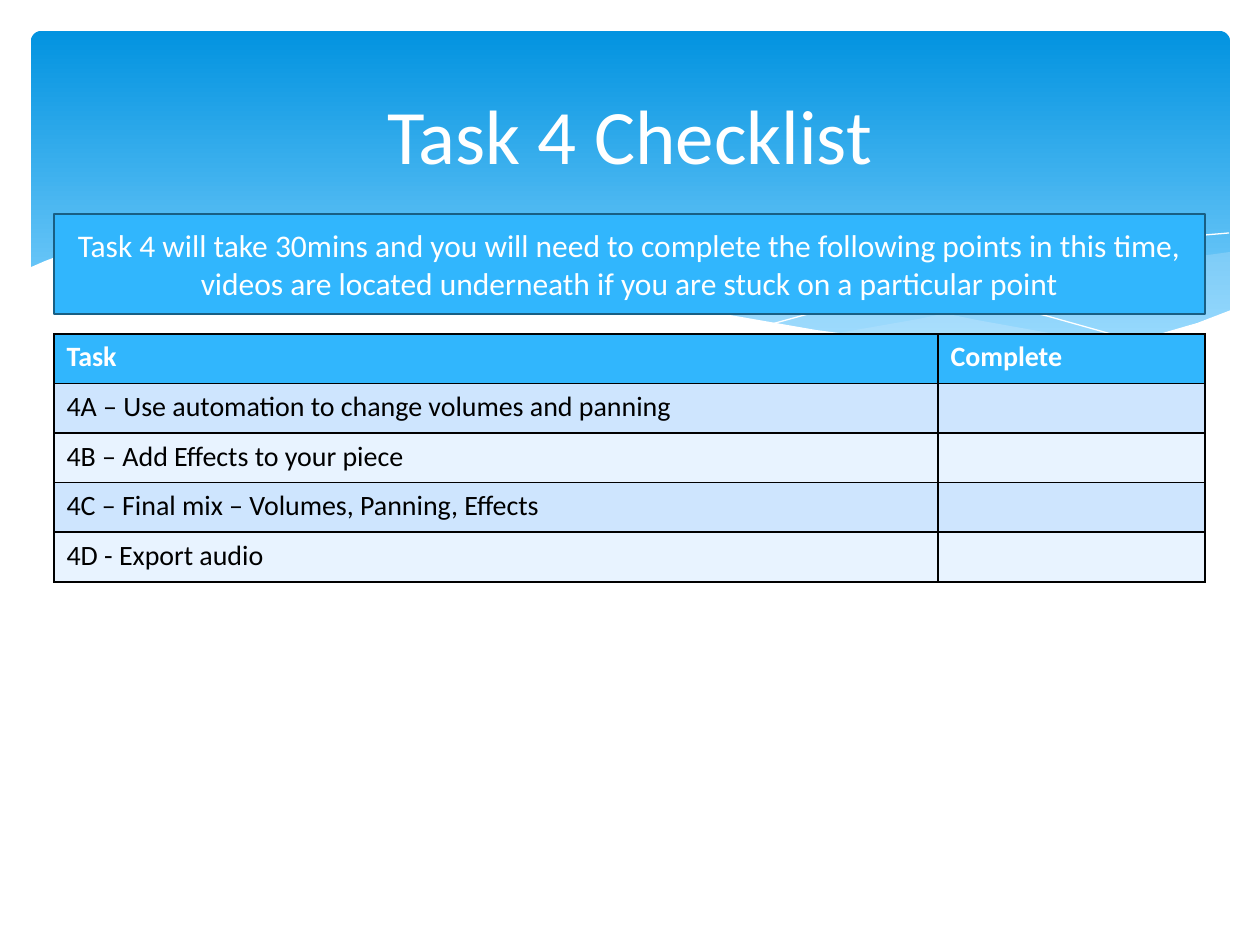
from lxml.etree import SubElement
from pptx import Presentation
from pptx.dml.color import RGBColor
from pptx.enum.shapes import MSO_SHAPE
from pptx.enum.text import MSO_ANCHOR, PP_ALIGN
from pptx.oxml.ns import qn
from pptx.util import Emu, Pt

EMU_PER_PX = 914400 / 126
FONT = "Calibri"
WHITE = RGBColor(0xFF, 0xFF, 0xFF)
BLACK = RGBColor(0x00, 0x00, 0x00)
BLUE = RGBColor(0x31, 0xB6, 0xFD)
DARK_BLUE = RGBColor(0x19, 0x5F, 0x84)
BANNER_TOP = RGBColor(0x02, 0x93, 0xE0)
BANNER_BOTTOM = RGBColor(0x83, 0xD3, 0xFE)
WAVE = RGBColor(0xC6, 0xE7, 0xFC)
BANDS = [RGBColor(0xCE, 0xE5, 0xFE), RGBColor(0xE8, 0xF3, 0xFF)]

RIGHT_WAVE = [
    (1230, 252), (1194, 257), (1142, 268), (1085, 281), (1014, 299), (919, 319), (833, 334),
    (888, 341), (954, 348), (1026, 350), (1087, 347), (1140, 339), (1187, 326), (1230, 311),
]
MIDDLE_WAVE = [
    (1125, 344), (1055, 334), (977, 320), (890, 302), (793, 280), (736, 266), (682, 256),
    (616, 244), (557, 238), (503, 234), (455, 233), (413, 236), (360, 241), (431, 251),
    (509, 266), (566, 280), (668, 302), (757, 321), (838, 335), (910, 345), (974, 349),
    (1031, 350), (1080, 349),
]
FALLING_LINE = [
    (389, 246), (413, 242), (457, 238), (524, 236), (591, 238), (672, 244), (766, 257),
    (876, 276), (958, 294), (1047, 316), (1143, 343),
]
RISING_LINE = [
    (772, 324), (823, 310), (907, 289), (978, 272), (1053, 257), (1128, 244), (1182, 237),
    (1229, 233),
]
WHITE_WAVE = [
    (1231, 310), (1197, 323), (1159, 334), (1118, 341), (1071, 347), (1019, 349), (959, 347),
    (892, 340), (816, 330), (730, 315), (634, 294), (563, 277), (493, 261), (428, 248),
    (368, 239), (315, 234), (243, 232), (184, 233), (134, 238), (96, 246), (66, 253),
    (45, 261), (29, 268), (29, 415), (1231, 415),
]
TASKS = [
    "4A – Use automation to change volumes and panning",
    "4B – Add Effects to your piece",
    "4C – Final mix – Volumes, Panning, Effects",
    "4D - Export audio",
]
INSTRUCTIONS = (
    "Task 4 will take 30mins and you will need to complete the following points in this time, "
    "videos are located underneath if you are stuck on a particular point"
)


def px(length):
    """Turn a length in px into EMU."""
    return Emu(round(length * EMU_PER_PX))


def format_runs(paragraph, size, color, bold=False):
    """Give every run of a paragraph its font, size and colour."""
    for run in paragraph.runs:
        run.font.name = FONT
        run.font.size = Pt(size)
        run.font.bold = bold
        run.font.color.rgb = color


def fill_text(shape, text, size):
    """Put centred white text in the middle of a shape."""
    text_frame = shape.text_frame
    text_frame.word_wrap = True
    text_frame.vertical_anchor = MSO_ANCHOR.MIDDLE
    text_frame.text = text
    paragraph = text_frame.paragraphs[0]
    paragraph.alignment = PP_ALIGN.CENTER
    format_runs(paragraph, size, WHITE)


def add_banner(slide):
    """Add the rounded gradient banner."""
    banner = slide.shapes.add_shape(
        MSO_SHAPE.ROUNDED_RECTANGLE, px(31), px(31), px(1199), px(340))
    banner.adjustments[0] = 0.03
    banner.shadow.inherit = False
    banner.line.fill.background()
    banner.fill.gradient()
    banner.fill.gradient_angle = 270
    stops = banner.fill.gradient_stops
    for stop, position, color in zip(stops, (0, 0.9), (BANNER_TOP, BANNER_BOTTOM)):
        stop.position = position
        stop.color.rgb = color


def add_outline(slide, points, close):
    """Add a freeform through the points."""
    builder = slide.shapes.build_freeform(*points[0], scale=EMU_PER_PX)
    builder.add_line_segments(points[1:], close=close)
    outline = builder.convert_to_shape()
    outline.shadow.inherit = False
    return outline


def add_wave(slide, points, color, opacity=100):
    """Add a filled wave, translucent below full opacity."""
    wave = add_outline(slide, points, True)
    wave.line.fill.background()
    wave.fill.solid()
    wave.fill.fore_color.rgb = color
    if opacity < 100:
        color_element = wave.fill._xPr.find(qn("a:solidFill"))[0]
        SubElement(color_element, qn("a:alpha"), val=str(opacity * 1000))


def add_wave_line(slide, points):
    """Add a white hairline curve."""
    curve = add_outline(slide, points, False)
    curve.fill.background()
    curve.line.color.rgb = WHITE
    curve.line.width = Pt(0)


def add_title(slide, text):
    """Add the slide title."""
    title = slide.shapes.add_textbox(px(63), px(47), px(1134), px(173))
    fill_text(title, text, 44)


def add_instruction_box(slide, text):
    """Add the framed instruction box."""
    box = slide.shapes.add_shape(MSO_SHAPE.RECTANGLE, px(54), px(214), px(1151), px(100))
    box.shadow.inherit = False
    box.fill.solid()
    box.fill.fore_color.rgb = BLUE
    box.line.color.rgb = DARK_BLUE
    box.line.width = Pt(1.25)
    fill_text(box, text, 18)


def style_cell(cell, text, fill, color, bold):
    """Fill a cell, write its text and draw its borders."""
    properties = cell._tc.get_or_add_tcPr()
    for side in ("a:lnL", "a:lnR", "a:lnT", "a:lnB"):
        border = SubElement(properties, qn(side), w=str(Pt(1)))
        border_fill = SubElement(border, qn("a:solidFill"))
        SubElement(border_fill, qn("a:srgbClr"), val=str(BLACK))
    cell.fill.solid()
    cell.fill.fore_color.rgb = fill
    paragraph = cell.text_frame.paragraphs[0]
    if text:
        paragraph.text = text
        format_runs(paragraph, 16, color, bold)
    else:
        SubElement(paragraph._p, qn("a:endParaRPr"), sz="1600")


def add_checklist(slide, tasks):
    """Add the checklist table with one row per task."""
    rows = [("Task", "Complete")] + [(task, "") for task in tasks]
    frame = slide.shapes.add_table(len(rows), 2, px(54), px(334), px(1151), px(248))
    table = frame.table
    for column, width in zip(table.columns, (884, 267)):
        column.width = px(width)
    for row_index, texts in enumerate(rows):
        header = row_index == 0
        fill = BLUE if header else BANDS[(row_index - 1) % 2]
        color = WHITE if header else BLACK
        for column_index, text in enumerate(texts):
            style_cell(table.cell(row_index, column_index), text, fill, color, header)


def main():
    """Build and save the checklist slide."""
    presentation = Presentation()
    presentation.slide_width = px(1260)
    presentation.slide_height = px(945)
    slide = presentation.slides.add_slide(presentation.slide_layouts[6])
    add_banner(slide)
    add_wave(slide, RIGHT_WAVE, WAVE, 29)
    add_wave(slide, MIDDLE_WAVE, WAVE, 40)
    add_wave_line(slide, FALLING_LINE)
    add_wave_line(slide, RISING_LINE)
    add_wave(slide, WHITE_WAVE, WHITE)
    add_checklist(slide, TASKS)
    add_title(slide, "Task 4 Checklist")
    add_instruction_box(slide, INSTRUCTIONS)
    presentation.save("out.pptx")


if __name__ == "__main__":
    main()
